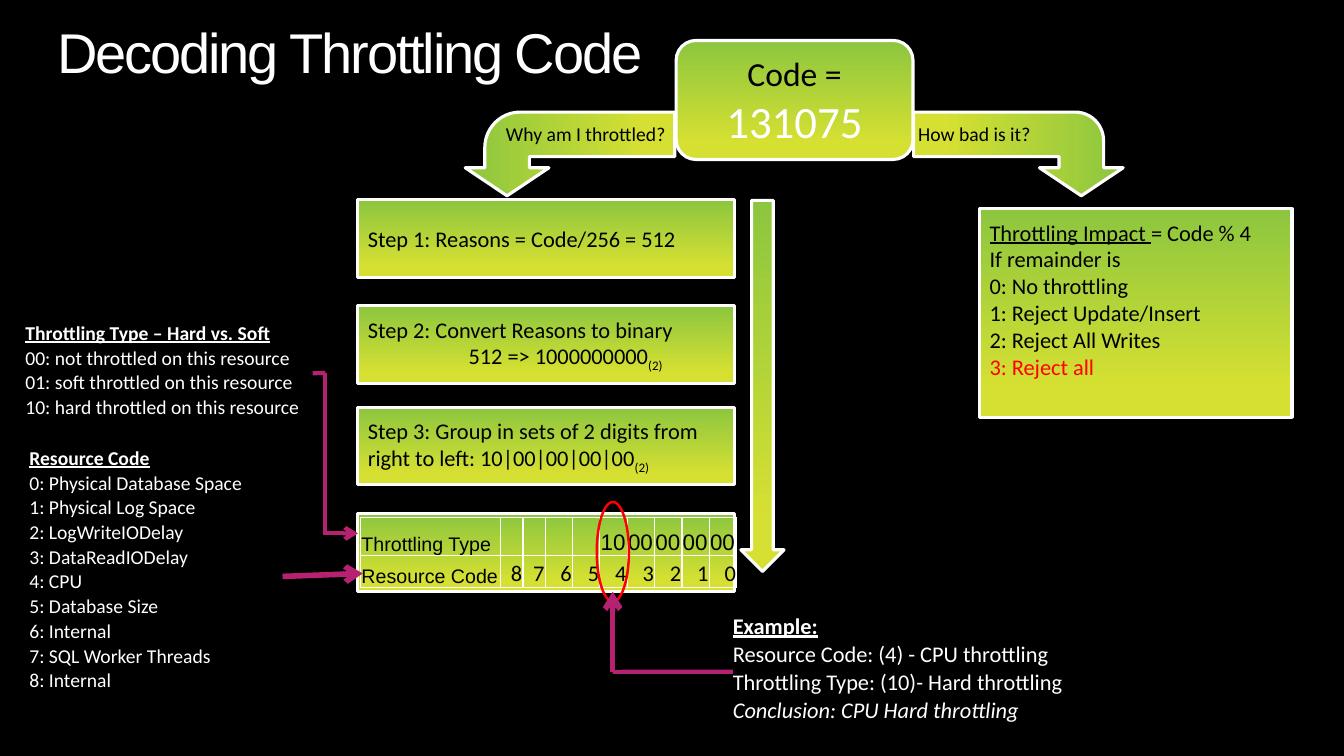
from dataclasses import dataclass

from lxml import etree
from pptx import Presentation
from pptx.dml.color import RGBColor
from pptx.enum.shapes import MSO_CONNECTOR, MSO_SHAPE
from pptx.enum.text import MSO_ANCHOR, PP_ALIGN
from pptx.oxml.ns import qn
from pptx.util import Cm, Pt

RECT, ROUNDED, OVAL = MSO_SHAPE.RECTANGLE, MSO_SHAPE.ROUNDED_RECTANGLE, MSO_SHAPE.OVAL
BENT, DOWN = MSO_SHAPE.BENT_ARROW, MSO_SHAPE.DOWN_ARROW
STRAIGHT = MSO_CONNECTOR.STRAIGHT
TOP, MIDDLE, BOTTOM = MSO_ANCHOR.TOP, MSO_ANCHOR.MIDDLE, MSO_ANCHOR.BOTTOM
LEFT, CENTER, RIGHT = PP_ALIGN.LEFT, PP_ALIGN.CENTER, PP_ALIGN.RIGHT
LEFT_SIDE, RIGHT_SIDE = 1, 3


@dataclass(frozen=True)
class Theme:
    black: str = "000000"
    white: str = "FFFFFF"
    green: str = "8CC63F"
    lime: str = "D6E032"
    red: str = "FF0000"
    magenta: str = "B72172"
    heading_font: str = "Arial"
    body_font: str = "Calibri"
    title: int = 40
    code: int = 32
    lead: int = 24
    body: int = 16
    small: int = 14


THEME = Theme()


@dataclass(frozen=True)
class Span:
    text: str
    color: str = THEME.black
    size: int = THEME.body
    font: str = THEME.body_font
    bold: bool = False
    underline: bool = False
    italic: bool = False
    subscript: bool = False


@dataclass(frozen=True)
class Area:
    left: float
    top: float
    width: float
    height: float

    def lengths(self) -> list:
        return [Cm(n) for n in (self.left, self.top, self.width, self.height)]


@dataclass(frozen=True)
class Note:
    area: Area
    size: int
    heading: str
    entries: tuple
    closing: str = ""


@dataclass(frozen=True)
class Link:
    start: tuple
    end: tuple
    width: int = 3
    arrow: bool = False
    begin_note: str = ""
    end_note: str = ""


def rgb(color: str) -> RGBColor:
    return RGBColor.from_string(color)


def write(frame, lines: list, anchor=MIDDLE, align=LEFT, margins=(0.25, 0.13)) -> None:
    """Fill a text frame; every line is a list of spans."""
    frame.word_wrap = True
    frame.vertical_anchor = anchor
    frame.margin_left = frame.margin_right = Cm(margins[0])
    frame.margin_top = frame.margin_bottom = Cm(margins[1])
    frame.text = "\n".join(line[0].text for line in lines)
    for para, line in zip(frame.paragraphs, lines):
        para.alignment = align
        for span in line[1:]:
            para.add_run().text = span.text
        for run, span in zip(para.runs, line):
            font = run.font
            font.name, font.size, font.color.rgb = span.font, Pt(span.size), rgb(span.color)
            font.bold, font.underline, font.italic = span.bold, span.underline, span.italic
            if span.subscript:
                run._r.get_or_add_rPr().set("baseline", "-25000")


def add_box(page, kind, area: Area):
    """Shape with the green gradient and white outline."""
    box = page.shapes.add_shape(kind, *area.lengths())
    box.shadow.inherit = False
    box.fill.gradient()
    box.fill.gradient_angle = 270
    for stop, color, position in zip(box.fill.gradient_stops, (THEME.green, THEME.lime), (0, 0.86)):
        stop.color.rgb, stop.position = rgb(color), position
    box.line.color.rgb, box.line.width = rgb(THEME.white), Pt(2.25)
    return box


def add_label(page, area: Area, span: Span, anchor=MIDDLE):
    label = page.shapes.add_textbox(*area.lengths())
    write(label.text_frame, [[span]], anchor, margins=(0, 0))
    return label


def add_note(page, note: Note):
    box = page.shapes.add_shape(RECT, *note.area.lengths())
    box.shadow.inherit = False
    box.fill.solid()
    box.fill.fore_color.rgb = rgb(THEME.black)
    box.line.fill.background()
    lines = [[Span(note.heading, THEME.white, note.size, bold=True, underline=True)]]
    lines += [[Span(entry, THEME.white, note.size)] for entry in note.entries]
    if note.closing:
        lines.append([Span(note.closing, THEME.white, note.size, italic=True)])
    write(box.text_frame, lines, TOP, margins=(0, 0))
    for index, para in enumerate(box.text_frame.paragraphs):
        para.line_spacing = 0.9
        para.space_before = Pt(note.size * 0.18 if index else 0)
    return box


def add_link(page, link: Link, notes: dict) -> None:
    line = page.shapes.add_connector(STRAIGHT, *[Cm(n) for n in link.start + link.end])
    line.line.color.rgb, line.line.width = rgb(THEME.magenta), Pt(link.width)
    if link.arrow:
        etree.SubElement(line.line._get_or_add_ln(), qn("a:tailEnd"), type="arrow")
    etree.SubElement(line._element.spPr, qn("a:effectLst"))
    if link.begin_note:
        line.begin_connect(notes[link.begin_note], RIGHT_SIDE)
    if link.end_note:
        line.end_connect(notes[link.end_note], LEFT_SIDE)


def add_bit_table(page) -> None:
    widths = [3.53, 0.56, 0.56] + [0.69] * 7
    heights = [0.97, 0.81]
    groups = ["Throttling Type"] + [""] * 4 + ["10"] + ["00"] * 4
    codes = ["Resource Code"] + [str(code) for code in range(8, -1, -1)]
    area = Area(9.09, 13.03, sum(widths), sum(heights))
    table = page.shapes.add_table(2, len(widths), *area.lengths()).table
    table.first_row = table.horz_banding = False
    for column, width in zip(table.columns, widths):
        column.width = Cm(width)
    for row, height, texts in zip(table.rows, heights, (groups, codes)):
        row.height = Cm(height)
        for index, (cell, text) in enumerate(zip(row.cells, texts)):
            is_code = texts is codes and index > 0
            span = Span(text, size=THEME.body if index else THEME.small,
                        font=THEME.body_font if is_code else THEME.heading_font)
            write(cell.text_frame, [[span]], align=RIGHT if is_code else LEFT)
            cell.vertical_anchor = BOTTOM
            cell.margin_left = cell.margin_right = cell.margin_top = Cm(0.02)
            cell.margin_bottom = 0
            for side in ("lnL", "lnR", "lnT", "lnB"):
                border = etree.SubElement(cell._tc.get_or_add_tcPr(), qn(f"a:{side}"), w=str(Pt(1)))
                paint = etree.SubElement(border, qn("a:solidFill"))
                etree.SubElement(paint, qn("a:srgbClr"), val=THEME.white)
            cell.fill.background()


BASE = Span("(2)", subscript=True)
STEPS = [
    (5.03, [[Span("Step 1: Reasons = Code/256 = 512")]]),
    (7.7, [[Span("Step 2: Convert Reasons to binary")], [Span("512 => 1000000000"), BASE]]),
    (10.26, [[Span("Step 3: Group in sets of 2 digits from right to left: 10|00|00|00|00"), BASE]]),
]
IMPACT = [
    [Span("Throttling Impact ", underline=True), Span("= Code % 4")],
    [Span("If remainder is")],
    [Span("0: No throttling")],
    [Span("1: Reject Update/Insert")],
    [Span("2: Reject All Writes")],
    [Span("3: Reject all", THEME.red)],
]
NOTES = {
    "resource": Note(Area(0.74, 11.3, 6.38, 6.45), THEME.small, "Resource Code", (
        "0: Physical Database Space", "1: Physical Log Space", "2: LogWriteIODelay",
        "3: DataReadIODelay", "4: CPU", "5: Database Size", "6: Internal",
        "7: SQL Worker Threads", "8: Internal")),
    "type": Note(Area(0.64, 8.15, 7.24, 2.51), THEME.small, "Throttling Type – Hard vs. Soft", (
        "00: not throttled on this resource", "01: soft throttled on this resource",
        "10: hard throttled on this resource")),
    "example": Note(Area(18.47, 15.49, 9.09, 2.87), THEME.body, "Example:", (
        "Resource Code: (4) - CPU throttling", "Throttling Type: (10)- Hard throttling"),
        "Conclusion: CPU Hard throttling"),
}
LINKS = [
    Link((7.12, 14.53), (9.14, 14.45), 4, True, begin_note="resource"),
    Link((15.44, 16.93), (15.44, 14.91), 4, True),
    Link((15.44, 16.93), (18.47, 16.93), end_note="example"),
    Link((7.88, 9.4), (8.2, 9.4), begin_note="type"),
    Link((8.2, 9.4), (8.2, 13.44)),
    Link((8.13, 13.44), (9.02, 13.44), arrow=True),
]
# left, rotation, mirrored, head length, label, label left
BRANCHES = [
    (13.31, 270, True, 0.423, "Why am I throttled?", 12.75),
    (24.61, 90, False, 0.339, "How bad is it?", 23.14),
]


def main() -> None:
    deck = Presentation()
    deck.slide_width, deck.slide_height = Cm(33.87), Cm(19.05)
    page = deck.slides.add_slide(deck.slide_layouts[6])
    page.background.fill.solid()
    page.background.fill.fore_color.rgb = rgb(THEME.black)

    # Title
    title = add_label(page, Area(1.45, 0.64, 30.96, 1.55), Span(
        "Decoding Throttling Code", THEME.white, THEME.title, THEME.heading_font), TOP)
    title_para = title.text_frame.paragraphs[0]
    title_para.line_spacing = 0.9
    title_para.runs[0]._r.get_or_add_rPr().set("spc", "-150")

    # Impact and the three steps
    impact = add_box(page, RECT, Area(24.69, 5.26, 7.87, 5.26))
    write(impact.text_frame, IMPACT, TOP, margins=(0.25, 0.25))
    for top, lines in STEPS:
        step = add_box(page, RECT, Area(9.02, top, 9.5, 1.96))
        write(step.text_frame, lines)
        for para in step.text_frame.paragraphs[1:]:
            para._p.get_or_add_pPr().set("marL", str(Cm(2.54)))

    # Bit groups, notes and the marked column
    add_box(page, RECT, Area(9.02, 12.95, 9.5, 1.96))
    add_bit_table(page)
    notes = {name: add_note(page, note) for name, note in NOTES.items()}
    marker = page.shapes.add_shape(OVAL, *Area(15.04, 12.65, 0.81, 2.51).lengths())
    marker.shadow.inherit = False
    marker.fill.background()
    marker.line.color.rgb, marker.line.width = rgb(THEME.red), Pt(1.75)

    # Flow arrows and the code itself
    add_box(page, DOWN, Area(18.67, 5.05, 1.09, 9.35))
    for left, rotation, mirrored, head, text, label_left in BRANCHES:
        arrow = add_box(page, BENT, Area(left, 1.24, 2.11, 5.28))
        arrow.rotation = rotation
        arrow._element.spPr.get_or_add_xfrm().flipH = mirrored
        for index, value in enumerate((0.532, 0.5, 0.335, head)):
            arrow.adjustments[index] = value
        add_label(page, Area(label_left, 3.07, 4.25, 0.6), Span(text, size=THEME.small))
    code = add_box(page, ROUNDED, Area(17.04, 1.02, 5.97, 3))
    write(code.text_frame, [[Span("Code = ", size=THEME.lead),
                             Span("131075", THEME.white, THEME.code)]], align=CENTER)

    # Connectors
    for link in LINKS:
        add_link(page, link, notes)
    deck.save("out.pptx")


if __name__ == "__main__":
    main()
